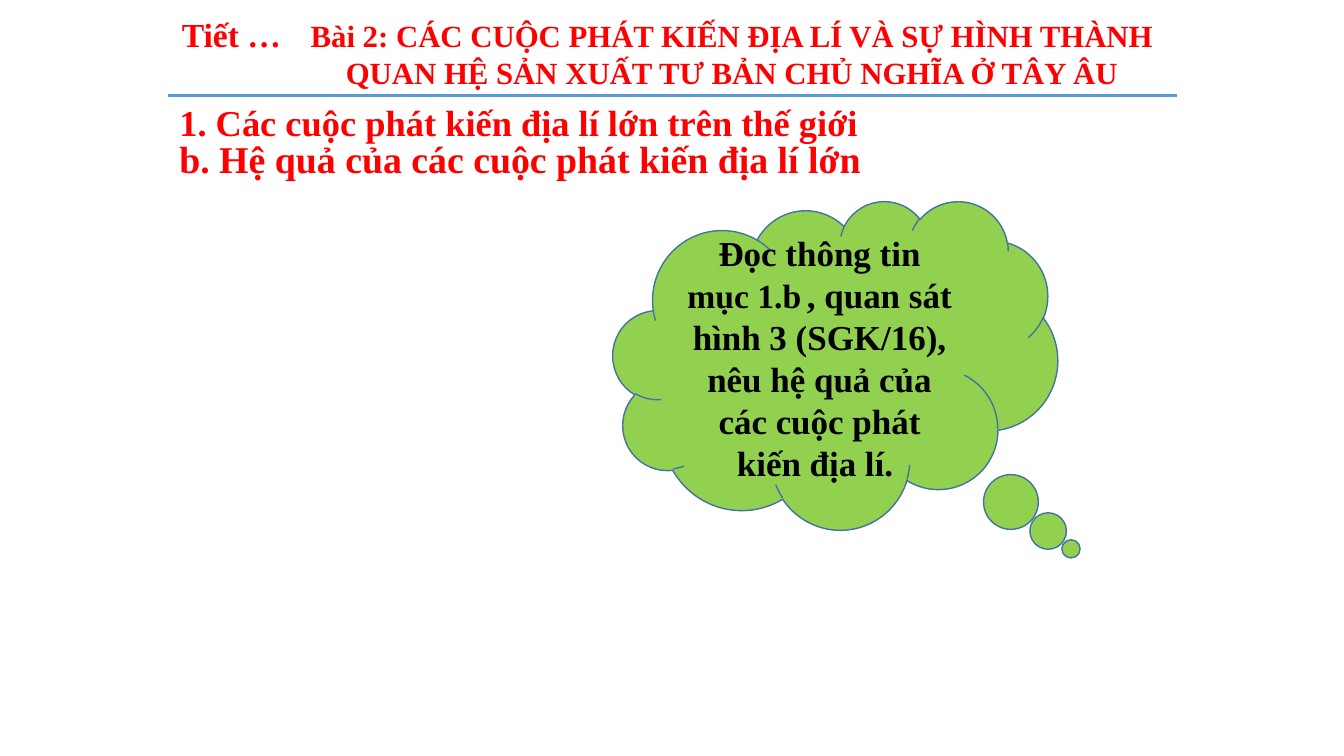
from dataclasses import dataclass

from lxml import etree
from pptx import Presentation
from pptx.dml.color import RGBColor
from pptx.enum.shapes import MSO_CONNECTOR, MSO_SHAPE
from pptx.enum.text import MSO_ANCHOR, PP_ALIGN
from pptx.oxml.ns import qn
from pptx.util import Inches, Pt

CENTER, JUSTIFY = PP_ALIGN.CENTER, PP_ALIGN.JUSTIFY
MIDDLE = MSO_ANCHOR.MIDDLE
CLOUD, STRAIGHT = MSO_SHAPE.CLOUD_CALLOUT, MSO_CONNECTOR.STRAIGHT

SLIDE_W, SLIDE_H = 13.33, 7.5
LEFT, RIGHT = 1.67 / SLIDE_W, 11.67 / SLIDE_W  # content column
RULE_Y = 0.95 / SLIDE_H


@dataclass(frozen=True)
class Theme:
    serif: str = "Times New Roman"
    sans: str = "Calibri"
    red: str = "FF0000"
    black: str = "000000"
    white: str = "FFFFFF"
    rule: str = "5B9BD5"
    cloud: str = "92D050"
    cloud_edge: str = "43739E"
    lesson: float = 24
    title: float = 22
    section: float = 26
    subsection: float = 27
    task: float = 25
    task_ref: float = 24
    gap: float = 18


THEME = Theme()


def share(x, y, w, h):
    """Turn shares of the slide into lengths."""
    return [Inches(part * size) for part, size in
            zip((x, y, w, h), (SLIDE_W, SLIDE_H, SLIDE_W, SLIDE_H))]


def style(size, color=THEME.red, name=THEME.serif, bold=True):
    return {"size": Pt(size), "name": name, "bold": bold, "color": color}


def write(frame, paragraphs, align):
    """Fill a frame with paragraphs, each a list of (text, style)."""
    frame.word_wrap = True
    frame.vertical_anchor = MIDDLE
    for index, runs in enumerate(paragraphs):
        paragraph = frame.add_paragraph() if index else frame.paragraphs[0]
        paragraph.alignment = align
        for text, look in runs:
            run = paragraph.add_run()
            run.text = text
            for key, value in look.items():
                if key == "color":
                    run.font.color.rgb = RGBColor.from_string(value)
                else:
                    setattr(run.font, key, value)


def add_heading(slide, box, lines, size, align):
    heading = slide.shapes.add_textbox(*share(*box))
    write(heading.text_frame, [[(line, style(size))] for line in lines], align)


def add_rule(slide):
    x1, y1, x2, y2 = share(LEFT, RULE_Y, RIGHT, RULE_Y)
    rule = slide.shapes.add_connector(STRAIGHT, x1, y1, x2, y2)
    rule.line.color.rgb = RGBColor.from_string(THEME.rule)
    rule.line.width = Pt(2.25)
    etree.SubElement(rule._element.spPr, qn("a:effectLst"))


def add_thought(slide, box, runs, tail):
    cloud = slide.shapes.add_shape(CLOUD, *share(*box))
    cloud.shadow.inherit = False
    cloud.fill.solid()
    cloud.fill.fore_color.rgb = RGBColor.from_string(THEME.cloud)
    cloud.line.color.rgb = RGBColor.from_string(THEME.cloud_edge)
    cloud.line.width = Pt(1)
    for index, offset in enumerate(tail):
        cloud.adjustments[index] = offset
    write(cloud.text_frame, [runs], CENTER)


def main():
    deck = Presentation()
    deck.slide_width, deck.slide_height = Inches(SLIDE_W), Inches(SLIDE_H)
    slide = deck.slides.add_slide(deck.slide_layouts[6])

    # Lesson header above the rule
    title_x = 2.92 / SLIDE_W
    add_heading(slide, (LEFT, 0.09 / SLIDE_H, title_x - LEFT, 0.5 / SLIDE_H),
                ["Tiết …"], THEME.lesson, CENTER)
    add_rule(slide)
    add_heading(slide, (title_x, 0.13 / SLIDE_H, RIGHT - title_x, 0.81 / SLIDE_H),
                ["Bài 2: CÁC CUỘC PHÁT KIẾN ĐỊA LÍ VÀ SỰ HÌNH THÀNH ",
                 "QUAN HỆ SẢN XUẤT TƯ BẢN CHỦ NGHĨA Ở TÂY ÂU "],
                THEME.title, CENTER)

    # Section headings
    sections = [
        ("1. Các cuộc phát kiến địa lí lớn trên thế giới", 1.02, 0.37, THEME.section),
        ("b. Hệ quả của các cuộc phát kiến địa lí lớn", 1.31, 0.52, THEME.subsection),
    ]
    for text, top, height, size in sections:
        add_heading(slide, (1.68 / SLIDE_W, top / SLIDE_H, 8.82 / SLIDE_W, height / SLIDE_H),
                    [text], size, JUSTIFY)

    # Task for the class
    task = style(THEME.task, THEME.black)
    add_thought(slide, (6.08 / SLIDE_W, 1.99 / SLIDE_H, 4.41 / SLIDE_W, 3.26 / SLIDE_H), [
        ("Đọc thông tin ", task),
        ("mục 1.b", style(THEME.task_ref, THEME.black)),
        (" ", style(THEME.gap, THEME.white, THEME.sans, False)),
        (", quan sát hình 3 (SGK/16), nêu hệ quả của các cuộc phát kiến địa lí. ", task),
    ], (0.53, 0.56))

    deck.save("out.pptx")


if __name__ == "__main__":
    main()
